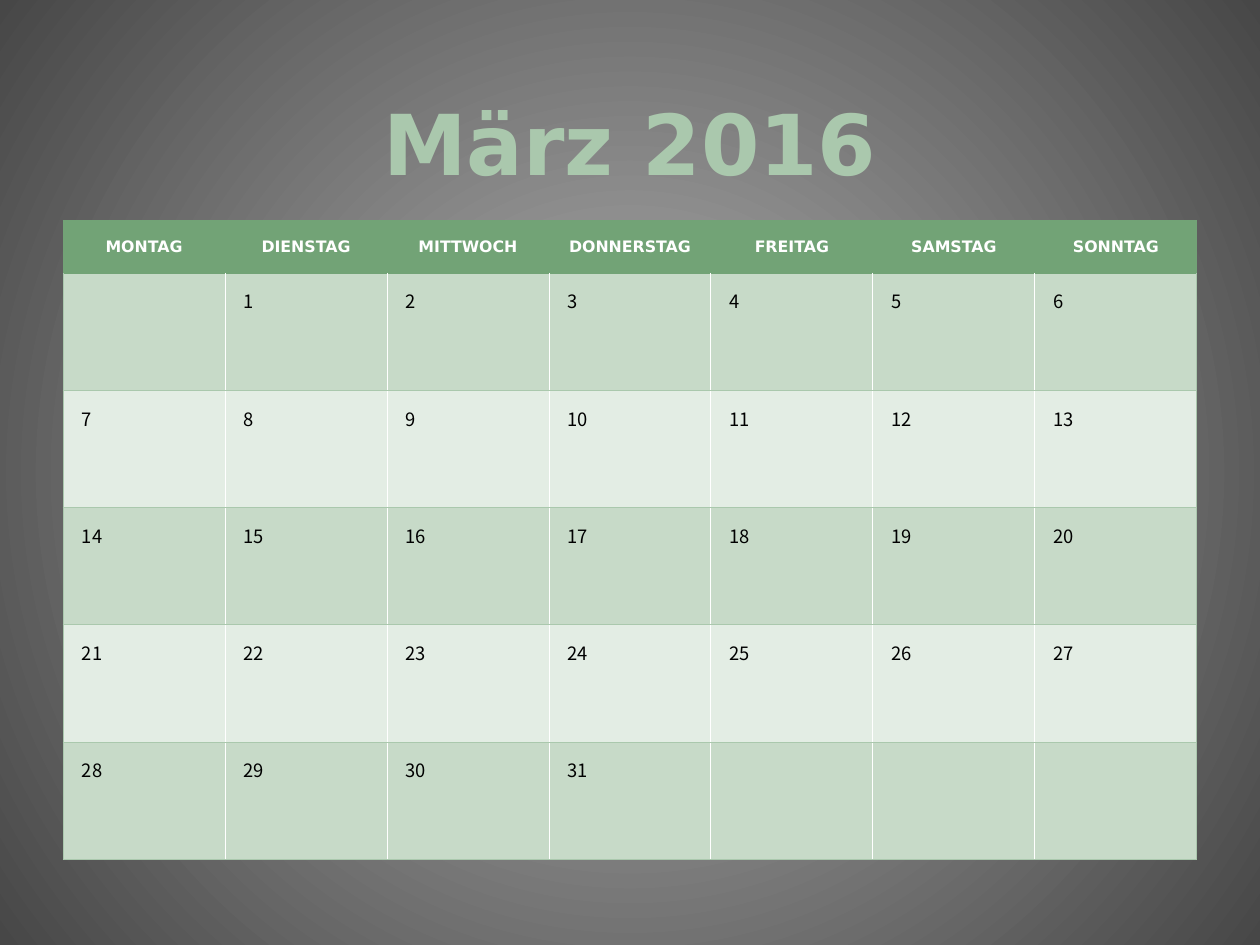
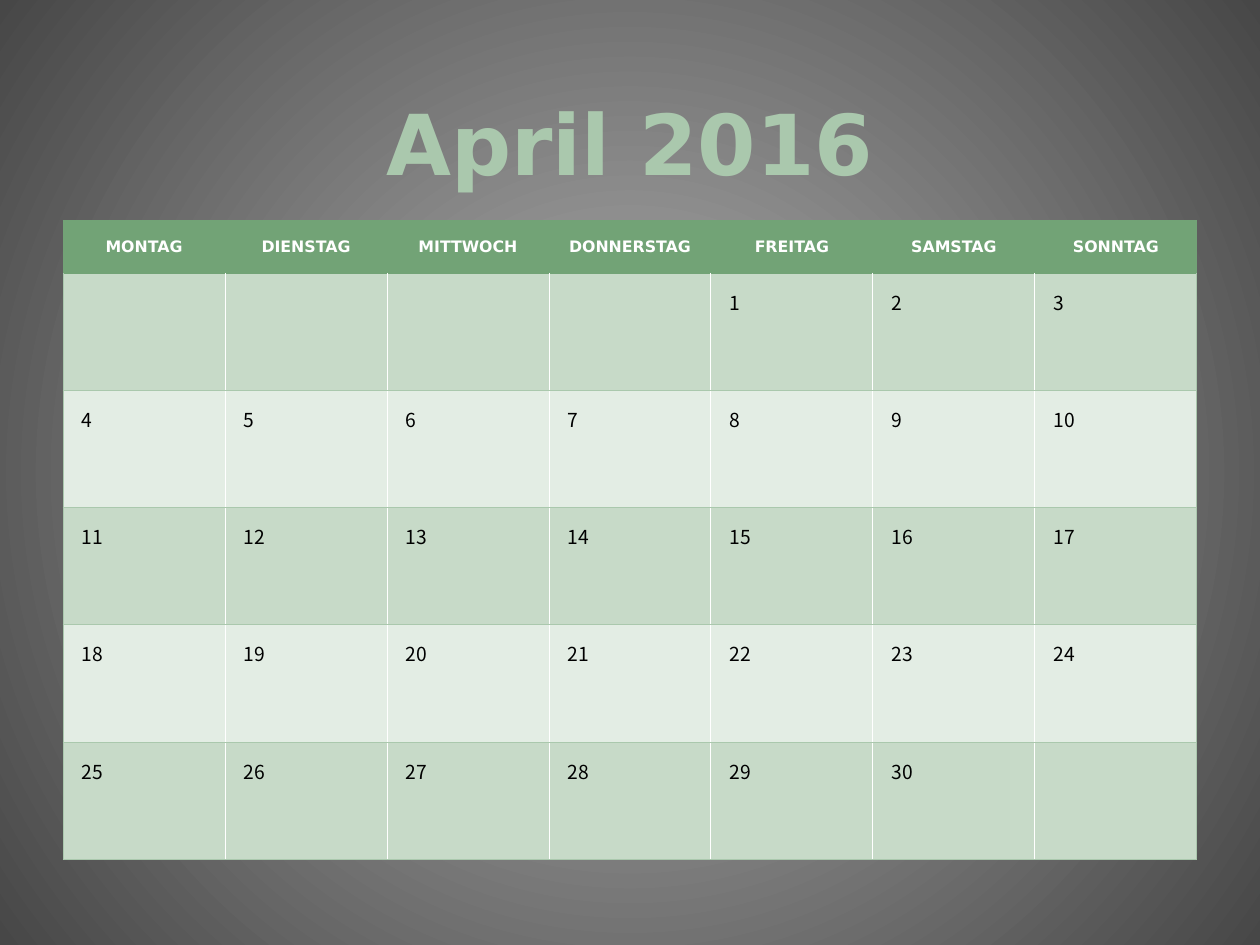
from lxml import etree
from pptx import Presentation
from pptx.dml.color import RGBColor
from pptx.enum import text
from pptx.oxml.ns import qn
from pptx.util import Inches, Pt

MONTHS = [
    {"title": "März 2016", "first_column": 1, "days": 31, "day_size": 10.5},
    {"title": "April 2016", "first_column": 4, "days": 30, "day_size": 11},
]
WEEKDAYS = ["MONTAG", "DIENSTAG", "MITTWOCH", "DONNERSTAG", "FREITAG", "SAMSTAG", "SONNTAG"]
WEEKS = 5

HEADING_FONT = "DejaVu Sans"
DAY_FONT = "Noto Sans CJK SC"
GLOW = RGBColor(0xB1, 0xB1, 0xB1)
SHADE = RGBColor(0x47, 0x47, 0x47)
GREEN = RGBColor(0x72, 0xA3, 0x76)
SOFT_GREEN = RGBColor(0xAA, 0xC8, 0xAD)
BANDS = [RGBColor(0xC7, 0xDA, 0xC8), RGBColor(0xE3, 0xED, 0xE4)]
WHITE = RGBColor(0xFF, 0xFF, 0xFF)
BLACK = RGBColor(0x00, 0x00, 0x00)

LEFT, WIDTH = 0.5, 9
TITLE_TOP, TITLE_HEIGHT = 0.33, 1.25
TABLE_TOP, HEADER_HEIGHT, WEEK_HEIGHT = 1.75, 0.42, 0.93


def set_font(paragraph, name, size, color, bold):
    font = paragraph.font
    font.name, font.size, font.bold = name, Pt(size), bold
    font.color.rgb = color


def set_background(master):
    fill = master.background.fill
    fill.gradient()
    for stop, position, color in zip(fill.gradient_stops, (0, 1), (GLOW, SHADE)):
        stop.position = position
        stop.color.rgb = color
    gradient = master.element.find(".//" + qn("a:gradFill"))
    for linear in gradient.findall(qn("a:lin")):
        gradient.remove(linear)
    circle = etree.SubElement(gradient, qn("a:path"), {"path": "circle"})
    etree.SubElement(circle, qn("a:fillToRect"), {side: "50000" for side in "ltrb"})


def set_borders(cell, left, right, top, bottom):
    properties = cell._tc.get_or_add_tcPr()
    for side, color in zip("LRTB", (left, right, top, bottom)):
        line = etree.SubElement(properties, qn(f"a:ln{side}"), {"w": str(Pt(0.5))})
        if color is None:
            etree.SubElement(line, qn("a:noFill"))
        else:
            solid = etree.SubElement(line, qn("a:solidFill"))
            etree.SubElement(solid, qn("a:srgbClr"), {"val": str(color)})


def style_cell(cell, fill, edge, inner, top, bottom, column):
    left = edge if column == 0 else inner
    right = edge if column == len(WEEKDAYS) - 1 else inner
    set_borders(cell, left, right, top, bottom)
    cell.fill.solid()
    cell.fill.fore_color.rgb = fill


def add_title(page, title):
    box = page.shapes.title
    box.left, box.top = Inches(LEFT), Inches(TITLE_TOP)
    box.width, box.height = Inches(WIDTH), Inches(TITLE_HEIGHT)
    box.text_frame.text = title
    box.text_frame.vertical_anchor = text.MSO_ANCHOR.BOTTOM
    para = box.text_frame.paragraphs[0]
    para.alignment = text.PP_ALIGN.CENTER
    set_font(para, HEADING_FONT, 48, SOFT_GREEN, True)


def add_calendar(page, month):
    height = HEADER_HEIGHT + WEEKS * WEEK_HEIGHT
    table = page.shapes.add_table(WEEKS + 1, len(WEEKDAYS), Inches(LEFT), Inches(TABLE_TOP),
                                  Inches(WIDTH), Inches(height)).table
    table.horz_banding = False
    table.rows[0].height = Inches(HEADER_HEIGHT)
    for column, weekday in enumerate(WEEKDAYS):
        cell = table.cell(0, column)
        style_cell(cell, GREEN, GREEN, None, GREEN, GREEN, column)
        cell.text = weekday
        cell.vertical_anchor = text.MSO_ANCHOR.MIDDLE
        para = cell.text_frame.paragraphs[0]
        para.alignment = text.PP_ALIGN.CENTER
        set_font(para, HEADING_FONT, 9, WHITE, True)

    for week in range(WEEKS):
        table.rows[week + 1].height = Inches(WEEK_HEIGHT)
        top = GREEN if week == 0 else SOFT_GREEN
        for column in range(len(WEEKDAYS)):
            cell = table.cell(week + 1, column)
            style_cell(cell, BANDS[week % 2], SOFT_GREEN, WHITE, top, SOFT_GREEN, column)
            day = week * len(WEEKDAYS) + column - month["first_column"] + 1
            if 1 <= day <= month["days"]:
                cell.text = str(day)
                para = cell.text_frame.paragraphs[0]
                para.line_spacing = 1.3
                para._p.get_or_add_pPr().set("marL", str(Inches(0.05)))
                set_font(para, DAY_FONT, month["day_size"], BLACK, False)


def main():
    deck = Presentation()
    deck.slide_width, deck.slide_height = Inches(10), Inches(7.5)
    set_background(deck.slide_master)
    title_only = deck.slide_layouts.get_by_name("Title Only")
    for month in MONTHS:
        page = deck.slides.add_slide(title_only)
        add_title(page, month["title"])
        add_calendar(page, month)
    deck.save("out.pptx")


if __name__ == "__main__":
    main()
